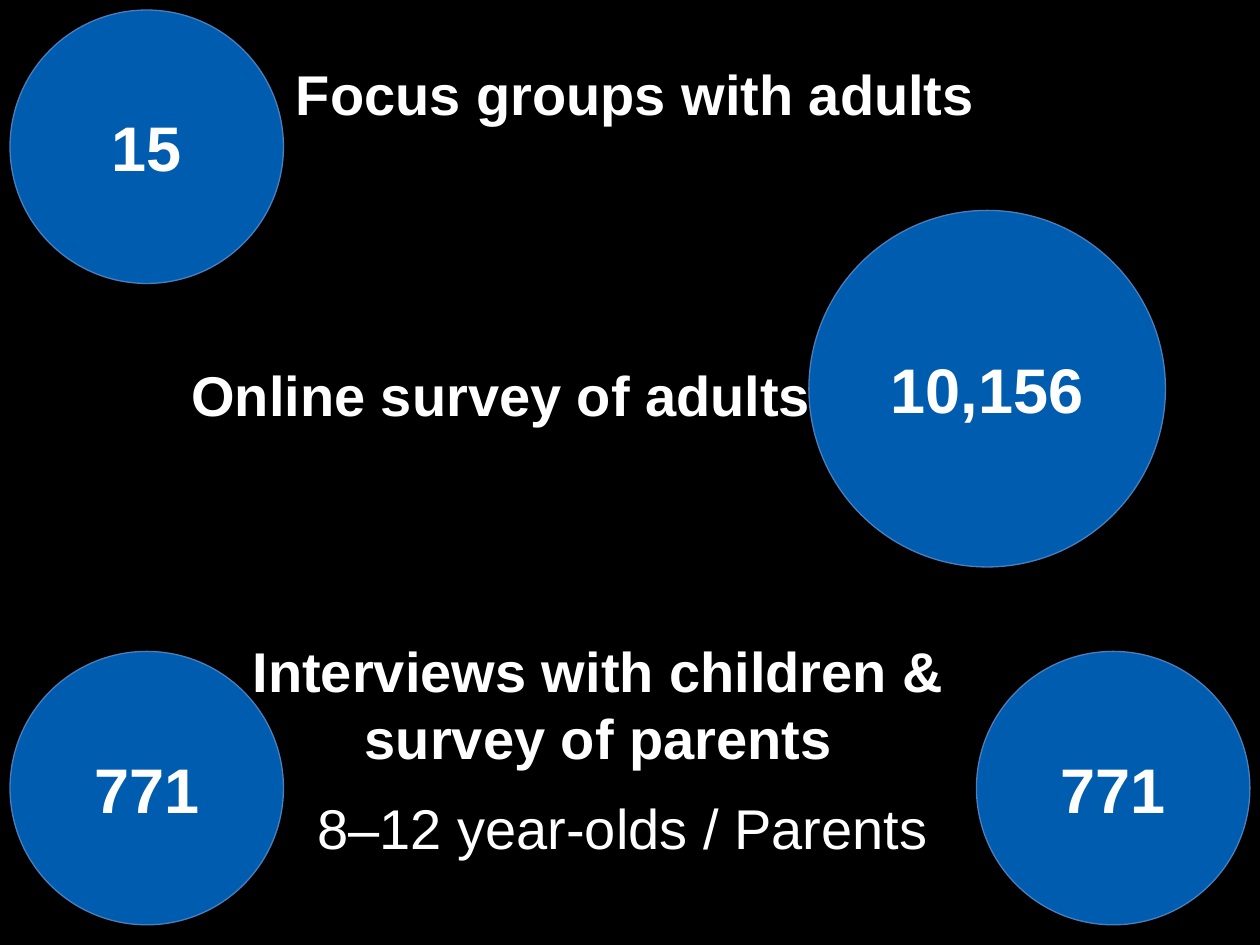
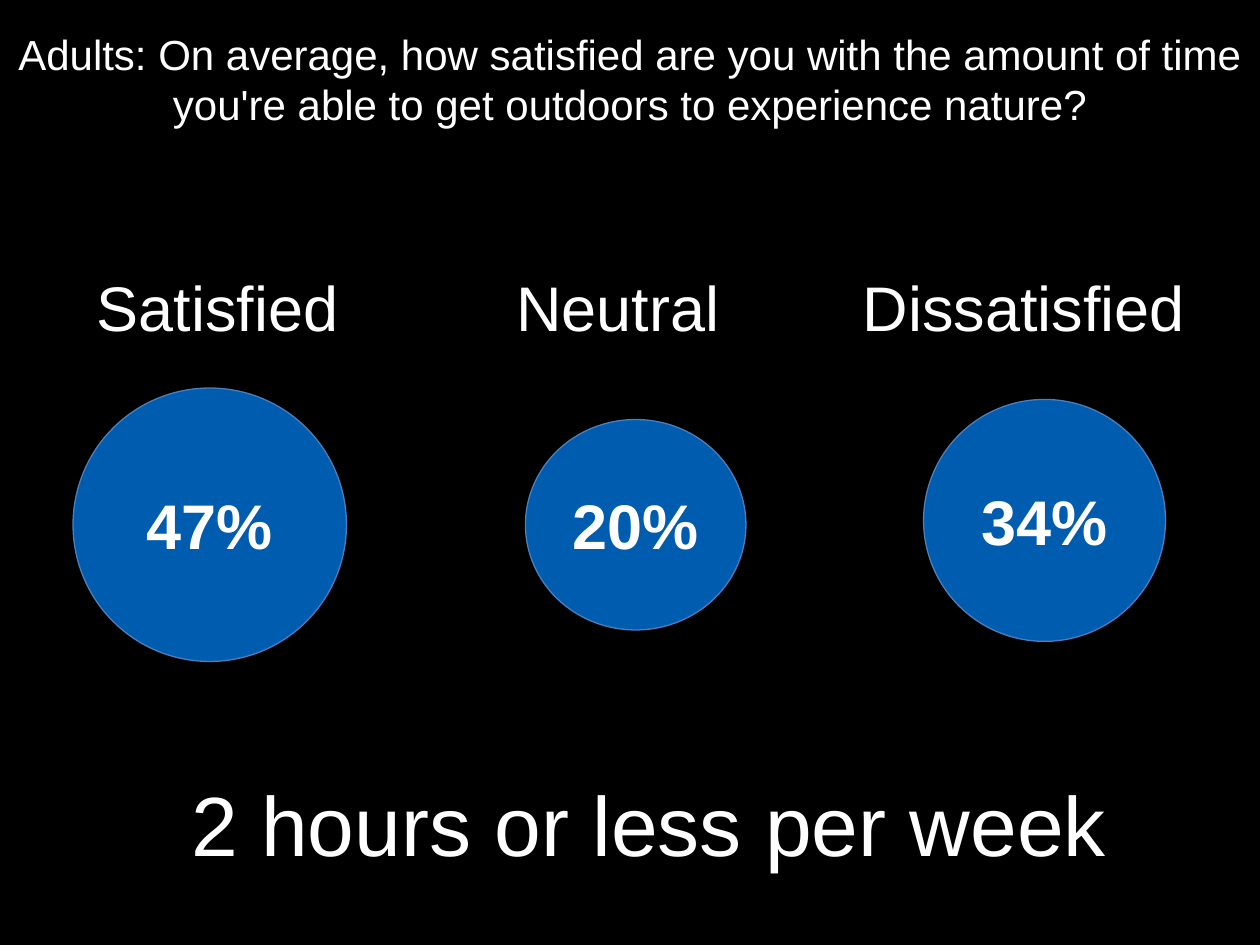
from dataclasses import dataclass

import pptx
import pptx.dml.color
import pptx.enum.shapes
import pptx.enum.text
import pptx.shapes.base
import pptx.slide
import pptx.util

Inches = pptx.util.Inches
Align = pptx.enum.text.PP_ALIGN
Anchor = pptx.enum.text.MSO_ANCHOR

FONT = "Arial"
BLACK = "000000"
WHITE = "FFFFFF"
BLUE = "005CAE"
EDGE_BLUE = "4B7EBC"
BUBBLE = 2.17  # diameter of the standard bubble


@dataclass(frozen=True)
class Bubble:
    figure: str
    left: float
    top: float
    width: float = BUBBLE
    height: float = BUBBLE


@dataclass(frozen=True)
class Label:
    text: str
    left: float
    top: float
    width: float
    height: float
    size: int
    bold: bool = False
    align: Align = Align.LEFT
    anchor: Anchor = Anchor.TOP


METHODS = [
    Bubble("15", 0.08, 0.08),
    Bubble("10,156", 6.42, 1.67, 2.83, 2.83),
    Label("Focus groups with adults", 2.25, 0.42, 7.42, 0.64, 32, True),
    Label("Online survey of adults", 1.42, 2.81, 6.75, 0.64, 32, True),
    Bubble("771", 0.08, 5.17),
    Label("Interviews with children &\vsurvey of parents", 0.25, 5, 9, 1.18, 32, True, Align.CENTER),
    Label("8–12 year-olds / Parents", 2.42, 6.25, 5.58, 1.42, 32),
    Bubble("771", 7.75, 5.17),
]

SATISFACTION = [
    Label(
        "Adults: On average, how satisfied are you with the amount of time "
        "you're able to get outdoors to experience nature?",
        0, 0, 10, 1.25, 24, False, Align.CENTER, Anchor.MIDDLE,
    ),
    Bubble("47%", 0.58, 3.08),
    Bubble("20%", 4.17, 3.33, 1.75, 1.67),
    Bubble("34%", 7.33, 3.17, 1.92, 1.92),
    Label("Satisfied", 0.67, 2.08, 2.17, 0.71, 36),
    Label("Neutral", 4, 2.08, 2.17, 0.71, 36),
    Label("Dissatisfied", 6.75, 2.08, 3.08, 0.71, 36),
    Label("2 hours or less per week", 1.42, 6.08, 8.17, 0.91, 48),
]


def color(value: str) -> pptx.dml.color.RGBColor:
    return pptx.dml.color.RGBColor.from_string(value)


def frame(item: Bubble | Label) -> list[int]:
    return [Inches(length) for length in (item.left, item.top, item.width, item.height)]


def write(
    shape: pptx.shapes.base.BaseShape, text: str, size: int, bold: bool, align: Align, anchor: Anchor
) -> None:
    shape.text_frame.word_wrap = True
    shape.text_frame.vertical_anchor = anchor
    para = shape.text_frame.paragraphs[0]
    para.text = text
    para.alignment = align
    font_format = {"name": FONT, "size": pptx.util.Pt(size), "bold": bold}
    for span in para.runs:
        for name, value in font_format.items():
            setattr(span.font, name, value)
        span.font.color.rgb = color(WHITE)


def draw_bubble(page: pptx.slide.Slide, bubble: Bubble) -> None:
    circle = page.shapes.add_shape(pptx.enum.shapes.MSO_SHAPE.OVAL, *frame(bubble))
    circle.shadow.inherit = False
    circle.fill.solid()
    circle.fill.fore_color.rgb = color(BLUE)
    circle.line.color.rgb = color(EDGE_BLUE)
    circle.line.width = pptx.util.Pt(0.75)
    write(circle, bubble.figure, 36, True, Align.CENTER, Anchor.MIDDLE)


def draw_label(page: pptx.slide.Slide, label: Label) -> None:
    box = page.shapes.add_textbox(*frame(label))
    write(box, label.text, label.size, label.bold, label.align, label.anchor)


def main() -> None:
    deck = pptx.Presentation()
    deck.slide_width, deck.slide_height = Inches(10), Inches(7.5)
    for items in (METHODS, SATISFACTION):
        page = deck.slides.add_slide(deck.slide_layouts[6])
        page.background.fill.solid()
        page.background.fill.fore_color.rgb = color(BLACK)
        for item in items:
            if isinstance(item, Bubble):
                draw_bubble(page, item)
            else:
                draw_label(page, item)
    deck.save("out.pptx")


if __name__ == "__main__":
    main()
